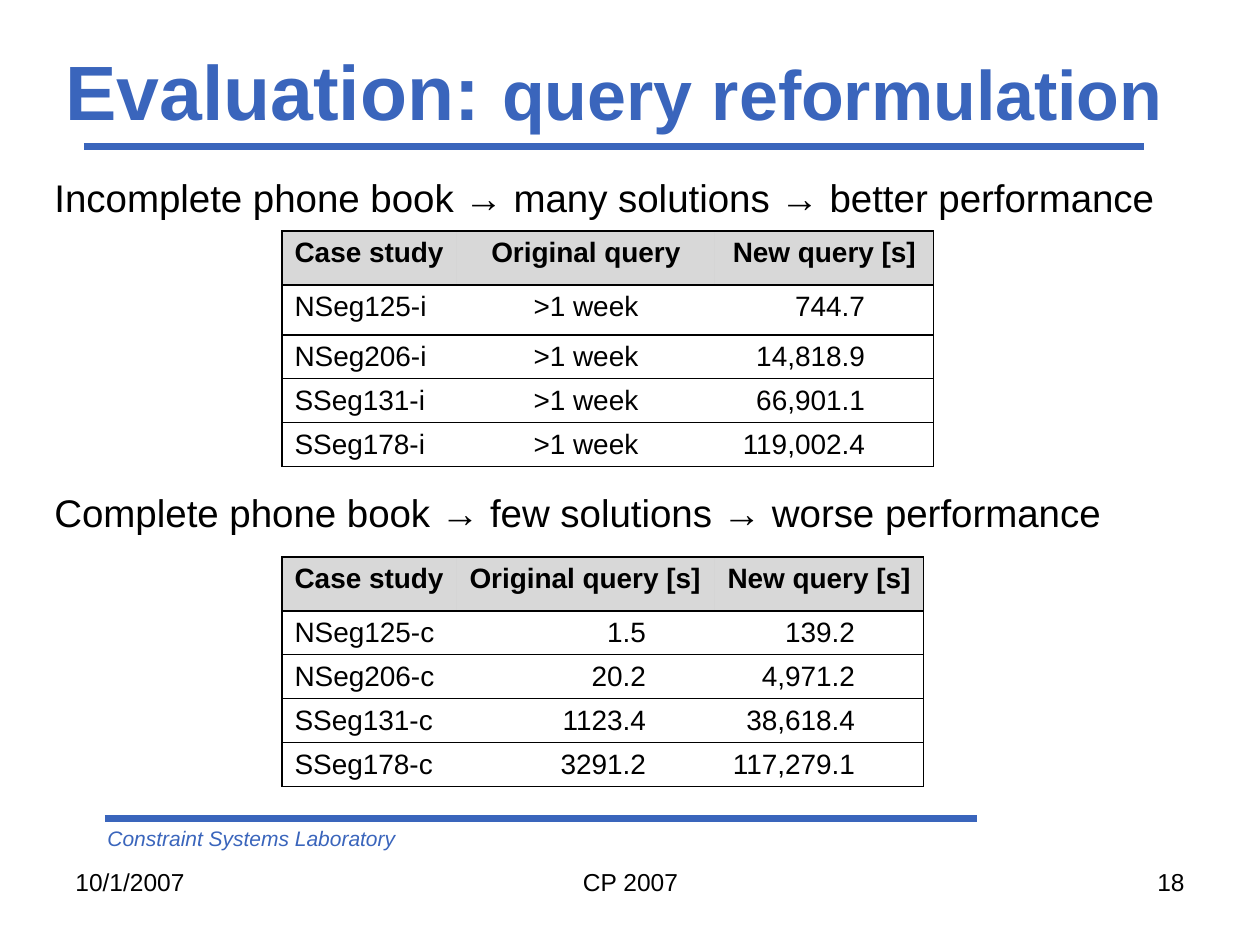
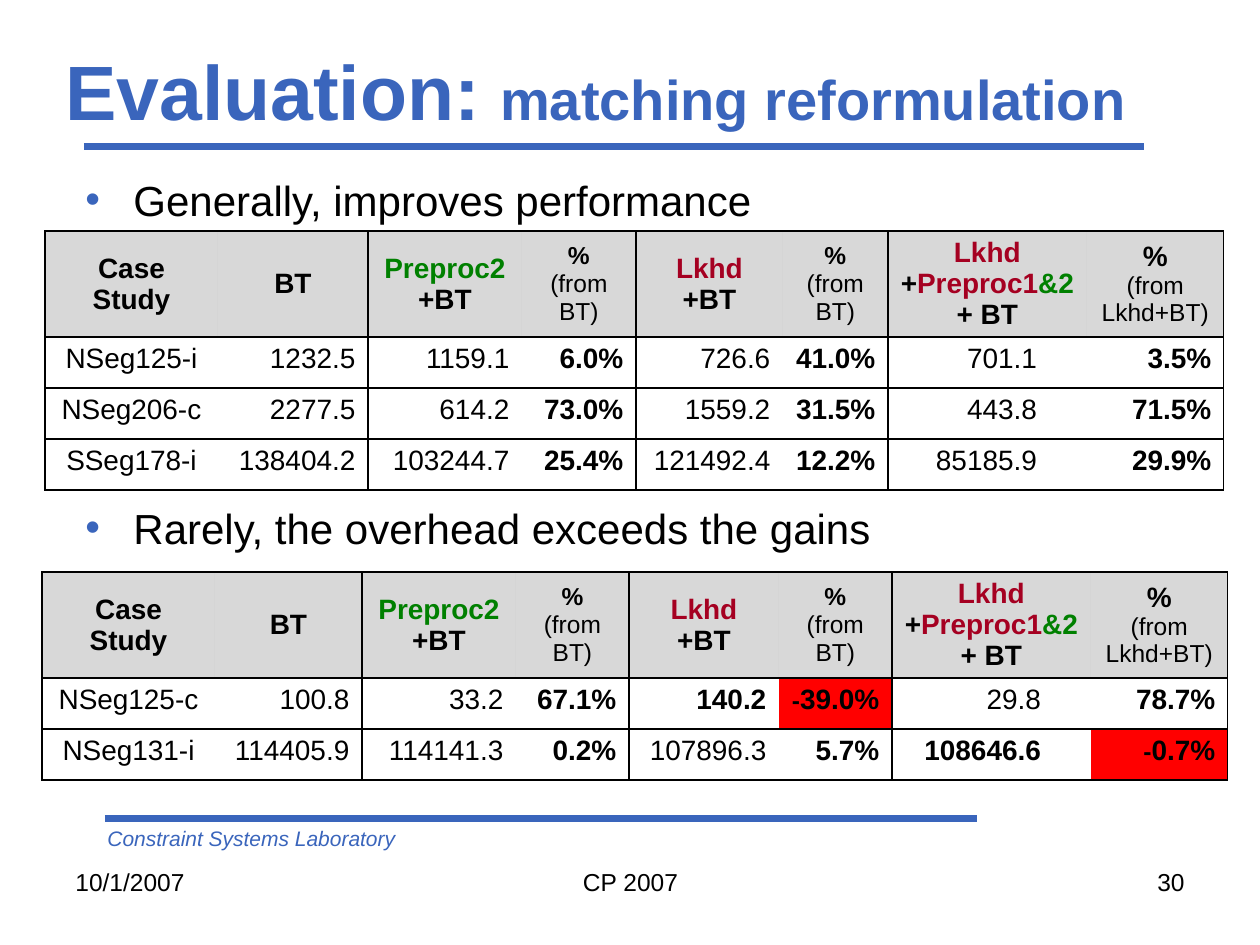
from lxml.etree import SubElement
from pptx import Presentation
from pptx.dml.color import RGBColor
from pptx.enum.shapes import MSO_CONNECTOR as Connector
from pptx.enum.text import MSO_ANCHOR as Anchor, PP_ALIGN as Align
from pptx.oxml.ns import qn
from pptx.util import Pt

PX = 914400 // 126
SLIDE_SIZE = (1260, 945)
FONT = "Arial"
COLORS = {"blue": "3A65BC", "black": "000000", "green": "008000",
          "crimson": "A50021", "header": "B2B2B2", "alert": "FF0000"}
ALIGN = {"l": Align.LEFT, "c": Align.CENTER, "r": Align.RIGHT}

RULES = [(84, 1144, 147), (105, 977, 819)]  # left, right, y
LAB = "Constraint Systems Laboratory"
DATE, EVENT = "10/1/2007", "CP 2007"

# A header cell is a list of lines; a line is a list of (text, style) runs.
SMALL = {"size": 14}
SMALL_PLAIN = {"size": 14, "bold": False}
GREEN, CRIMSON = {"color": "green"}, {"color": "crimson"}
PERCENT_FROM_BT = [[("%", SMALL)], [("(from BT)", SMALL_PLAIN)]]
MATCHING_HEADER = [
    [[("Case", {})], [("Study", {})]],
    [[("BT", {})]],
    [[("Preproc2", GREEN)], [("+BT", {})]],
    PERCENT_FROM_BT,
    [[("Lkhd", CRIMSON)], [("+BT", {})]],
    PERCENT_FROM_BT,
    [[("Lkhd", CRIMSON)],
     [("+", {}), ("Preproc1", CRIMSON), ("&2", GREEN)],
     [("+ BT", {})]],
    [[("%", {})], [("(from Lkhd+BT)", SMALL_PLAIN)]],
]


def query_header(*titles):
    return [[[(title, {})]] for title in titles]


QUERY_STYLE = {"dividers": (), "anchor": Anchor.TOP}
MATCHING_STYLE = {"dividers": (2, 4, 6), "anchor": Anchor.MIDDLE,
                  "header": MATCHING_HEADER, "header_align": "cccccccc",
                  "align": "crrrrrrr", "right_margins": {6: 50}}

SLIDES = [
    {
        "number": "18",
        "title": [("Evaluation: ", {}), ("query reformulation", {"size": 40})],
        "statements": [
            (168, "Incomplete phone book → many solutions → better performance"),
            (483, "Complete phone book → few solutions → worse performance"),
        ],
        "bulleted": False,
        "tables": [
            QUERY_STYLE | {
                "at": (282, 231), "columns": [175, 258, 219],
                "rows": [54, 50, 44, 44, 44],
                "header": query_header("Case study", "Original query", "New query [s]"),
                "header_align": "lcc", "align": "lcr", "right_margins": {2: 69},
                "body": [("NSeg125-i", ">1 week", "744.7"),
                         ("NSeg206-i", ">1 week", "14,818.9"),
                         ("SSeg131-i", ">1 week", "66,901.1"),
                         ("SSeg178-i", ">1 week", "119,002.4")],
            },
            QUERY_STYLE | {
                "at": (282, 557), "columns": [175, 258, 209],
                "rows": [54, 44, 44, 44, 44],
                "header": query_header("Case study", "Original query [s]", "New query [s]"),
                "header_align": "lll", "align": "lrr", "right_margins": {1: 69, 2: 69},
                "body": [("NSeg125-c", "1.5", "139.2"),
                         ("NSeg206-c", "20.2", "4,971.2"),
                         ("SSeg131-c", "1123.4", "38,618.4"),
                         ("SSeg178-c", "3291.2", "117,279.1")],
            },
        ],
    },
    {
        "number": "30",
        "title": [("Evaluation:", {}), (" ", {"size": 40}),
                  ("matching reformulation", {"size": 32})],
        "statements": [(168, "Generally, improves performance"),
                       (496, "Rarely, the overhead exceeds the gains")],
        "bulleted": True,
        "tables": [
            MATCHING_STYLE | {
                "at": (45, 231), "columns": [173, 150, 154, 114, 147, 105, 199, 137],
                "rows": [106, 51, 51, 51],
                "body": [
                    ("NSeg125-i", "1232.5", "1159.1", "6.0%",
                     "726.6", "41.0%", "701.1", "3.5%"),
                    ("NSeg206-c", "2277.5", "614.2", "73.0%",
                     "1559.2", "31.5%", "443.8", "71.5%"),
                    ("SSeg178-i", "138404.2", "103244.7", "25.4%",
                     "121492.4", "12.2%", "85185.9", "29.9%"),
                ],
            },
            MATCHING_STYLE | {
                "at": (42, 572), "columns": [173, 147, 154, 113, 150, 113, 199, 137],
                "rows": [106, 51, 51],
                "body": [
                    ("NSeg125-c", "100.8", "33.2", "67.1%",
                     "140.2", "-39.0%", "29.8", "78.7%"),
                    ("NSeg131-i", "114405.9", "114141.3", "0.2%",
                     "107896.3", "5.7%", "108646.6", "-0.7%"),
                ],
            },
        ],
    },
]
SLOWER_TIMES = {"140.2", "108646.6"}


def rgb(name):
    return RGBColor.from_string(COLORS[name])


def style_font(font, size=None, color=None, bold=None, italic=None):
    if size:
        font.size = Pt(size)
    if color:
        font.color.rgb = rgb(color)
    if bold is not None:
        font.bold = bold
    if italic is not None:
        font.italic = italic


def write_paragraph(paragraph, runs, align="l", **base):
    """Set the shared font on the paragraph and only the differences on runs."""
    paragraph.alignment = ALIGN[align]
    paragraph.font.name = FONT
    style_font(paragraph.font, **({"color": "black"} | base))
    for text, style in runs:
        run = paragraph.add_run()
        run.text = text
        style_font(run.font, **style)


def add_text(slide, box, runs, align="l", anchor=Anchor.TOP, bulleted=False, **base):
    shape = slide.shapes.add_textbox(*(value * PX for value in box))
    frame = shape.text_frame
    frame.word_wrap = True
    frame.vertical_anchor = anchor
    paragraph = frame.paragraphs[0]
    if bulleted:
        add_bullet(paragraph)
    write_paragraph(paragraph, runs, align, **base)


def add_bullet(paragraph):
    properties = paragraph._p.get_or_add_pPr()
    properties.set("marL", str(48 * PX))
    properties.set("indent", str(-48 * PX))
    color = SubElement(properties, qn("a:buClr"))
    SubElement(color, qn("a:srgbClr"), val=COLORS["blue"])
    SubElement(properties, qn("a:buFont"), typeface=FONT)
    SubElement(properties, qn("a:buChar"), char="•")


def add_rule(slide, left, right, y):
    rule = slide.shapes.add_connector(
        Connector.STRAIGHT, left * PX, y * PX, right * PX, y * PX)
    rule.line.color.rgb = rgb("blue")
    rule.line.width = Pt(4)
    SubElement(rule._element.spPr, qn("a:effectLst"))


def set_borders(cell, widths):
    """Draw the left, right, top and bottom borders; a width of 0 hides one."""
    properties = cell._tc.get_or_add_tcPr()
    for side, width in zip("LRTB", widths):
        line = SubElement(properties, qn(f"a:ln{side}"), w=str(Pt(width)))
        if width:
            fill = SubElement(line, qn("a:solidFill"))
            SubElement(fill, qn("a:srgbClr"), val=COLORS["black"])
        else:
            SubElement(line, qn("a:noFill"))


def fill_cell(cell, name, opacity=100):
    cell.fill.solid()
    cell.fill.fore_color.rgb = rgb(name)
    if opacity < 100:
        color = cell._tc.tcPr.find(f"{qn('a:solidFill')}/{qn('a:srgbClr')}")
        SubElement(color, qn("a:alpha"), val=str(opacity * 1000))


def write_header_cell(cell, lines, align, anchor):
    fill_cell(cell, "header", 50)
    cell.vertical_anchor = anchor
    if anchor == Anchor.MIDDLE:
        cell.margin_top = cell.margin_bottom = 2 * PX
    frame = cell.text_frame
    for index, runs in enumerate(lines):
        paragraph = frame.add_paragraph() if index else frame.paragraphs[0]
        write_paragraph(paragraph, runs, align, size=16, bold=True)


def write_body_cell(cell, text, align, right_margin):
    runs = [(text, {})]
    cell.margin_bottom = 3 * PX
    if text.startswith("-"):
        fill_cell(cell, "alert")
        cell.margin_left = 4 * PX
        runs = [("-", SMALL), (text[1:], {})]
    else:
        cell.fill.background()
    if right_margin:
        cell.margin_right = right_margin * PX
    bold = text.endswith("%") or text in SLOWER_TIMES
    write_paragraph(cell.text_frame.paragraphs[0], runs, align, size=16, bold=bold)


def add_data_table(slide, data):
    columns, rows = data["columns"], data["rows"]
    box = (*data["at"], sum(columns), sum(rows))
    table = slide.shapes.add_table(
        len(rows), len(columns), *(value * PX for value in box)).table
    table.first_row = table.horz_banding = False
    for column, width in zip(table.columns, columns):
        column.width = width * PX
    for row, height in zip(table.rows, rows):
        row.height = height * PX

    edges = {index: 1 for index in data["dividers"]} | {0: 0.75, len(columns): 0.75}
    for r, values in enumerate([data["header"], *data["body"]]):
        for c, value in enumerate(values):
            cell = table.cell(r, c)
            set_borders(cell, (edges.get(c, 0), edges.get(c + 1, 0), 0.75, 0.75))
            if r == 0:
                write_header_cell(cell, value, data["header_align"][c], data["anchor"])
            else:
                write_body_cell(cell, value, data["align"][c],
                                data["right_margins"].get(c))


def add_frame(slide, title, number):
    """Add the title, rules and footer that every slide has."""
    for rule in RULES:
        add_rule(slide, *rule)
    add_text(slide, (53, 42, 1164, 95), title, anchor=Anchor.MIDDLE,
             size=44, color="blue", bold=True)
    add_text(slide, (95, 819, 661, 38), [(LAB, {})],
             size=12, color="blue", italic=True)
    for left, width, text, align in ((63, 294, DATE, "l"),
                                     (431, 399, EVENT, "c"),
                                     (903, 294, number, "r")):
        add_text(slide, (left, 861, width, 66), [(text, {})], align, size=14)


def main():
    presentation = Presentation()
    presentation.slide_width, presentation.slide_height = (
        value * PX for value in SLIDE_SIZE)
    for content in SLIDES:
        slide = presentation.slides.add_slide(presentation.slide_layouts[6])
        add_frame(slide, content["title"], content["number"])
        bulleted = content["bulleted"]
        left, size = (73, 24) if bulleted else (42, 22)
        for top, text in content["statements"]:
            add_text(slide, (left, top, 1140, 59), [(text, {})],
                     bulleted=bulleted, size=size)
        for data in content["tables"]:
            add_data_table(slide, data)
    presentation.save("out.pptx")


if __name__ == "__main__":
    main()
